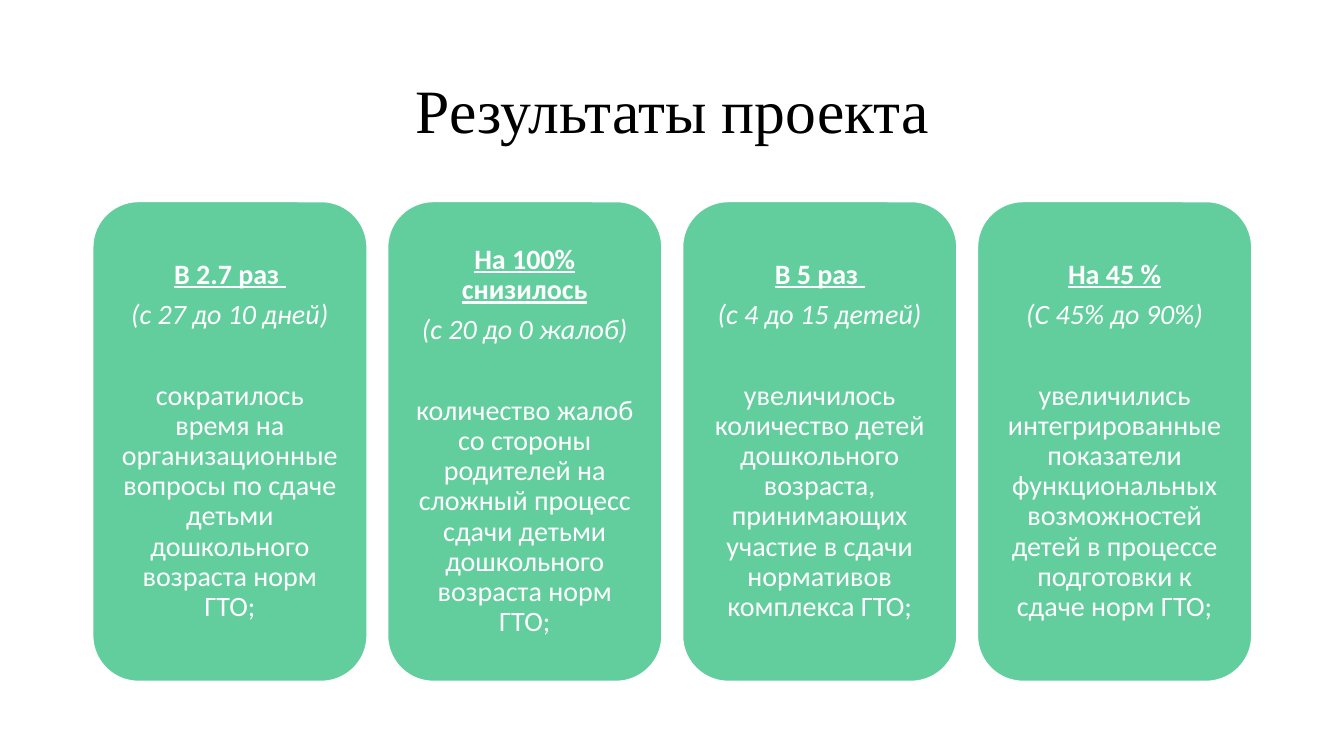
from pptx import Presentation
from pptx.dml.color import RGBColor
from pptx.enum.shapes import MSO_SHAPE
from pptx.enum.text import MSO_ANCHOR, PP_ALIGN
from pptx.util import Inches, Pt

GREEN = RGBColor(0x62, 0xCE, 0x9D)
WHITE = RGBColor(0xFF, 0xFF, 0xFF)
BLACK = RGBColor(0, 0, 0)

RESULTS = [
    ("В 2.7 раз ", "(с 27 до 10 дней)",
     "сократилось время на организационные вопросы по сдаче детьми "
     "дошкольного возраста норм ГТО;"),
    ("На 100% снизилось", "(с 20 до 0 жалоб)",
     "количество жалоб со стороны родителей на сложный процесс сдачи "
     "детьми дошкольного возраста норм ГТО;"),
    ("В 5 раз ", "(с 4 до 15 детей)",
     "увеличилось количество детей дошкольного возраста, принимающих "
     "участие в сдачи нормативов комплекса ГТО;"),
    ("На 45 %", "(С 45% до 90%)",
     "увеличились интегрированные показатели функциональных возможностей "
     "детей в процессе подготовки к сдаче норм ГТО;"),
]


def style(paragraph, font_name, size, color):
    paragraph.alignment = PP_ALIGN.CENTER
    paragraph.line_spacing = 0.9
    paragraph.font.name = font_name
    paragraph.font.size = Pt(size)
    paragraph.font.color.rgb = color


prs = Presentation()
prs.slide_width = Inches(13.33)
prs.slide_height = Inches(7.5)
slide = prs.slides.add_slide(prs.slide_layouts[6])

title = slide.shapes.add_textbox(Inches(0.92), Inches(0.4), Inches(11.5), Inches(1.45))
title.text_frame.word_wrap = True
title.text_frame.vertical_anchor = MSO_ANCHOR.MIDDLE
title.text_frame.text = "Результаты проекта"
style(title.text_frame.paragraphs[0], "Times New Roman", 44, BLACK)

for column, result in enumerate(RESULTS):
    card = slide.shapes.add_shape(
        MSO_SHAPE.ROUNDED_RECTANGLE,
        Inches(0.92 + 2.925 * column), Inches(2), Inches(2.72), Inches(4.76))
    card.shadow.inherit = False
    card.fill.solid()
    card.fill.fore_color.rgb = GREEN
    card.line.color.rgb = WHITE
    card.line.width = Pt(1)

    frame = card.text_frame
    frame.word_wrap = True
    frame.vertical_anchor = MSO_ANCHOR.MIDDLE
    frame.margin_left = frame.margin_right = Inches(0.14)
    frame.margin_top = frame.margin_bottom = 0
    frame.text = "\n".join(result)
    for paragraph in frame.paragraphs:
        style(paragraph, "Calibri", 20, WHITE)

    change, span, description = frame.paragraphs
    change.font.bold = True
    change.font.underline = True
    change.space_after = Pt(7)
    span.font.italic = True
    span.space_after = Pt(36)

prs.save("out.pptx")
